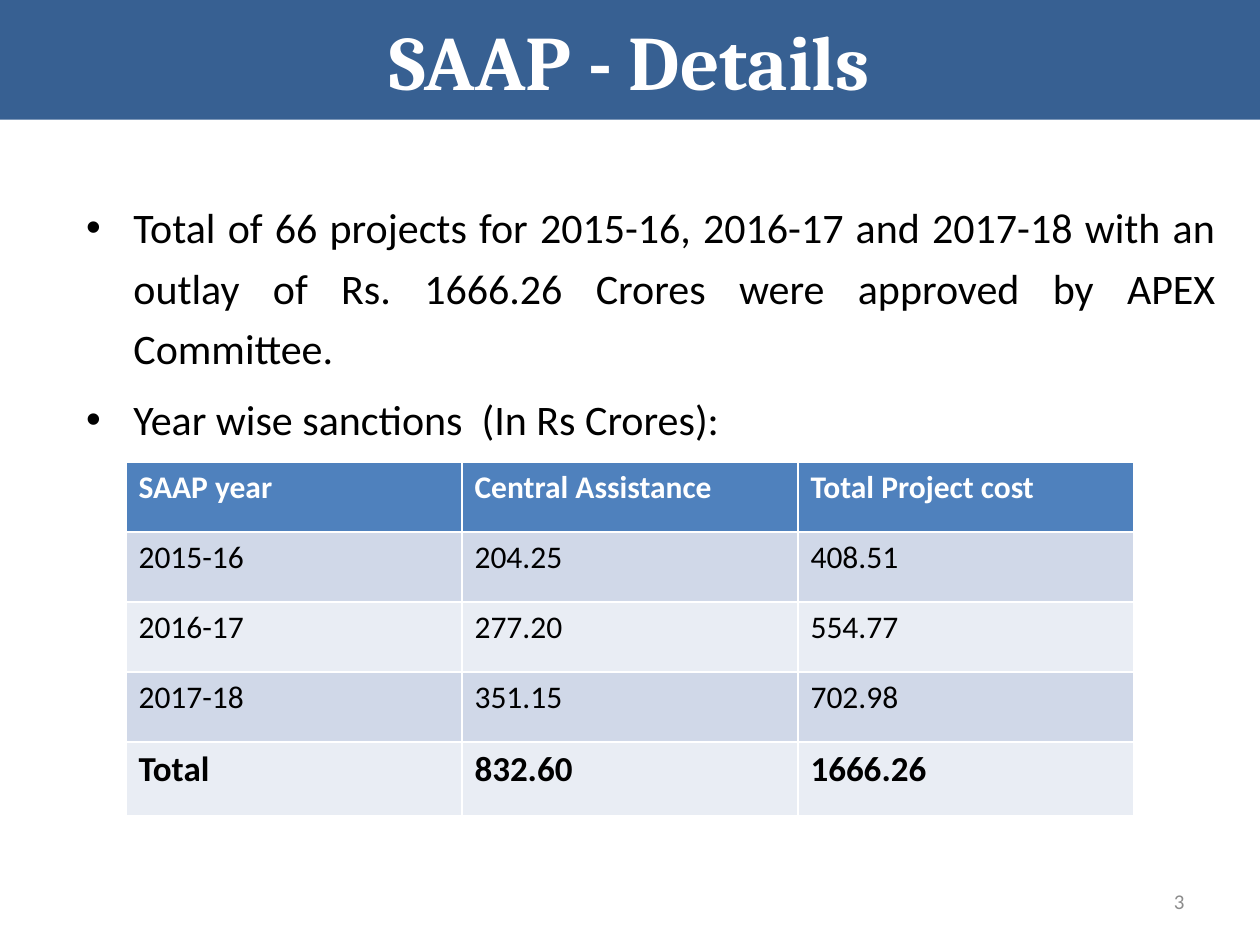
import pptx
import pptx.dml.color
import pptx.enum.text
import pptx.util

Pt = pptx.util.Pt
ALIGN = pptx.enum.text.PP_ALIGN
ANCHOR = pptx.enum.text.MSO_ANCHOR

BULLETS = [
    "Total of 66 projects for 2015-16, 2016-17 and 2017-18 with an outlay of "
    "Rs. 1666.26 Crores were approved by APEX Committee.",
    "Year wise sanctions  (In Rs Crores):",
]
SANCTIONS = [
    ("SAAP year", "Central Assistance", "Total Project cost"),
    ("2015-16", "204.25", "408.51"),
    ("2016-17", "277.20", "554.77"),
    ("2017-18", "351.15", "702.98"),
    ("Total", "832.60", "1666.26"),
]


def rgb(code):
    return pptx.dml.color.RGBColor.from_string(code)


def set_fill(target, color):
    target.fill.solid()
    target.fill.fore_color.rgb = rgb(color)


def place(sp, left, top, width, height):
    for name, value in zip(("left", "top", "width", "height"),
                           (left, top, width, height)):
        setattr(sp, name, Pt(value))


def write(p, text, size, color, font="Calibri", bold=False, **paragraph):
    """Put one formatted run in p; extra values format the paragraph."""
    r = p.add_run()
    r.text = text
    for name, value in {"name": font, "size": Pt(size), "bold": bold}.items():
        setattr(r.font, name, value)
    r.font.color.rgb = rgb(color)
    for name, value in paragraph.items():
        setattr(p, name, value)


def add_title(s, text):
    sp = s.shapes.title
    place(sp, 0, 0, 720, 68.4)
    set_fill(sp, "376092")
    sp.text_frame.vertical_anchor = ANCHOR.MIDDLE
    write(sp.text_frame.paragraphs[0], text, 44, "FFFFFF", "Cambria", True,
          alignment=ALIGN.CENTER)


def add_bullets(s, items):
    sp = s.placeholders[1]
    place(sp, 42, 106, 660, 152)
    tf = sp.text_frame
    tf.auto_size = pptx.enum.text.MSO_AUTO_SIZE.NONE
    tf.vertical_anchor = ANCHOR.TOP
    for i, item in enumerate(items):
        p = tf.add_paragraph() if i else tf.paragraphs[0]
        write(p, item, 24, "000000", alignment=ALIGN.JUSTIFY,
              line_spacing=1.2, space_before=Pt(6))


def add_sanctions_table(s, rows):
    last = len(rows) - 1
    table = s.shapes.add_table(len(rows), len(rows[0]), Pt(72), Pt(264),
                               Pt(576), Pt(202)).table
    for i, row in enumerate(rows):
        table.rows[i].height = Pt(42 if i == last else 40)
        fill = "4F81BD" if i == 0 else ("E9EDF4", "D0D8E8")[i % 2]
        for j, text in enumerate(row):
            cell = table.cell(i, j)
            set_fill(cell, fill)
            write(cell.text_frame.paragraphs[0], text, 20 if i == last else 18,
                  "000000" if i else "FFFFFF", bold=i in (0, last))


def add_page_number(s, number):
    sp = s.shapes.add_textbox(Pt(516), Pt(500.5), Pt(168), Pt(28.75))
    tf = sp.text_frame
    tf.word_wrap = True
    tf.vertical_anchor = ANCHOR.MIDDLE
    write(tf.paragraphs[0], number, 12, "8C8C8C", alignment=ALIGN.RIGHT)


def main():
    prs = pptx.Presentation()
    prs.slide_width, prs.slide_height = Pt(720), Pt(540)
    s = prs.slides.add_slide(prs.slide_layouts[1])
    add_title(s, "SAAP - Details")
    add_bullets(s, BULLETS)
    add_sanctions_table(s, SANCTIONS)
    add_page_number(s, "3")
    prs.save("out.pptx")


if __name__ == "__main__":
    main()
